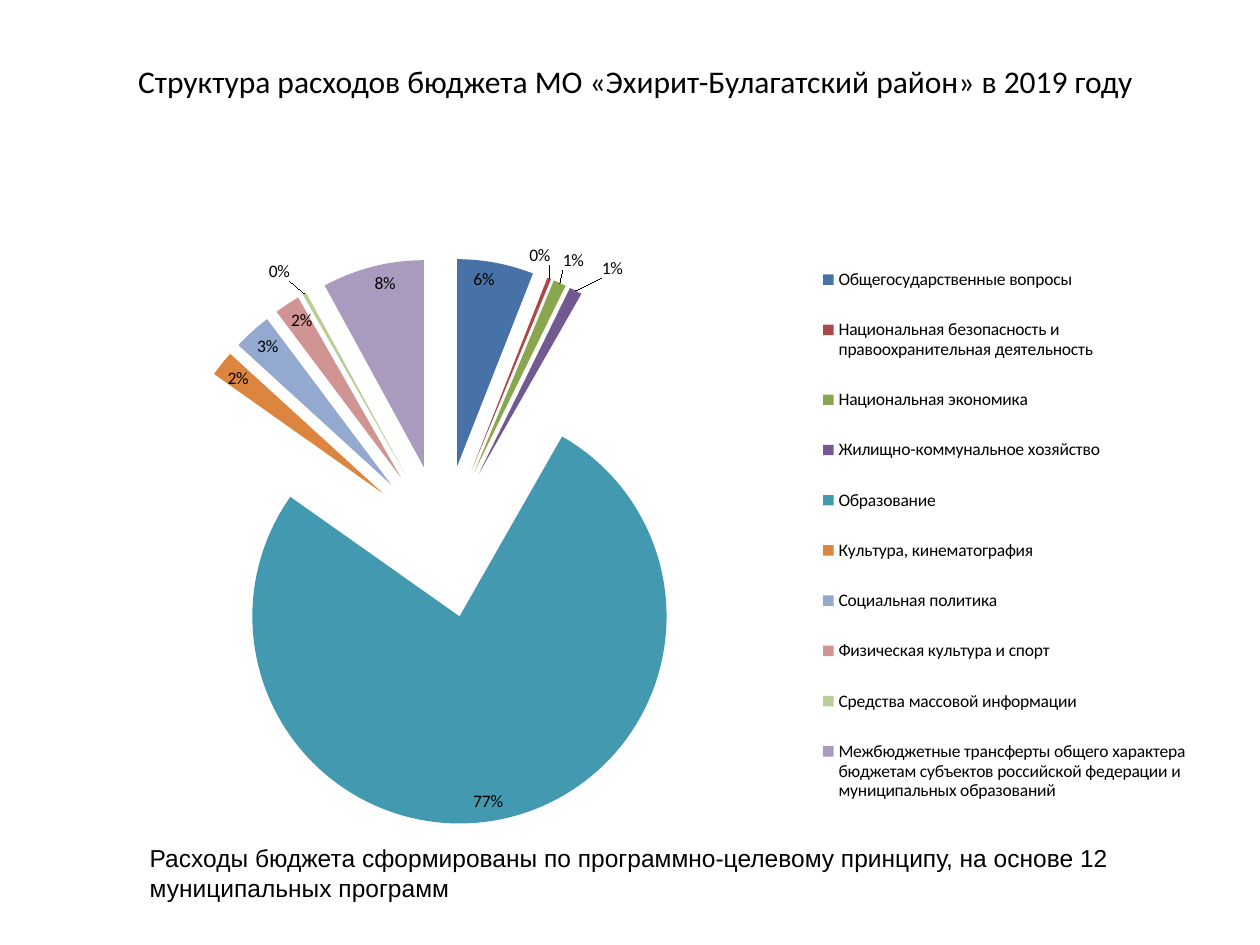
from lxml.etree import SubElement
from pptx import Presentation
from pptx.chart.data import CategoryChartData as Data
from pptx.dml.color import RGBColor
from pptx.enum.chart import XL_CHART_TYPE as Kind, XL_LABEL_POSITION as Pos
from pptx.enum.chart import XL_LEGEND_POSITION as Side
from pptx.enum.text import MSO_ANCHOR as Anchor, PP_ALIGN as Align
from pptx.oxml.ns import qn
from pptx.util import Inches, Pt

TITLE = "Структура расходов бюджета МО «Эхирит-Булагатский район» в 2019 году"
NOTE = ("Расходы бюджета сформированы по программно-целевому принципу, "
        "на основе 12 муниципальных программ")
COSTS = [
    ("Общегосударственные вопросы", 6, "4672A8"),
    ("Национальная безопасность и правоохранительная деятельность", 0.3, "AB4744"),
    ("Национальная экономика", 1, "8AA64F"),
    ("Жилищно-коммунальное хозяйство", 1, "725990"),
    ("Образование", 77, "4299B0"),
    ("Культура, кинематография", 2, "DC853E"),
    ("Социальная политика", 3, "93A9D0"),
    ("Физическая культура и спорт", 2, "D09493"),
    ("Средства массовой информации", 0.3, "B9CE97"),
    ("Межбюджетные трансферты общего характера бюджетам субъектов "
     "российской федерации и муниципальных образований", 8, "A99BBD"),
]
SHIFTS = {1: (-0.02, -0.01), 2: (0, -0.01), 3: (0.02, -0.01), 8: (-0.01, -0.01)}


def color(code):
    """Turn a hex string into a colour."""
    return RGBColor.from_string(code)


def style(font, name, size):
    """Set the face, size and black colour of a font."""
    font.name, font.size = name, Pt(size)
    font.color.rgb = color("000000")


def write(shape, text, name, size, align):
    """Fill a shape with one styled, vertically centred paragraph."""
    frame = shape.text_frame
    frame.word_wrap = True
    frame.vertical_anchor = Anchor.MIDDLE
    frame.text = text
    para = frame.paragraphs[0]
    para.alignment = align
    style(para.font, name, size)


def add_title(slide, box):
    """Place the slide title in the box."""
    title = slide.shapes.title
    title.left, title.top, title.width, title.height = map(Inches, box)
    write(title, TITLE, "Calibri", 18, Align.CENTER)


def set_layout(node, spot, index=1, inner=False):
    """Fix a part to a box, or shift it by a pair, in fractions of the chart."""
    for old in node.findall(qn("c:layout")):
        node.remove(old)
    layout = SubElement(node, qn("c:layout"))
    node.insert(index, layout)
    manual = SubElement(layout, qn("c:manualLayout"))
    if inner:
        SubElement(manual, qn("c:layoutTarget")).set("val", "inner")
    if len(spot) == 4:
        for tag in ("xMode", "yMode"):
            SubElement(manual, qn("c:" + tag)).set("val", "edge")
    for tag, part in zip("xywh", spot):
        SubElement(manual, qn("c:" + tag)).set("val", str(part))


def add_label(point, shift):
    """Set the percent label of a thin slice outside it, moved by the shift."""
    label = point.data_label
    label.position = Pos.OUTSIDE_END
    node = label._dLbl
    for tag, flag in (("Val", "0"), ("Percent", "1"), ("LegendKey", "0")):
        node.find(qn("c:show" + tag)).set("val", flag)
    set_layout(node, shift)


def add_pie(slide, box):
    """Place the exploded pie of costs and its legend in the box."""
    data = Data()
    data.categories = [name for name, _, _ in COSTS]
    data.add_series("Расходы", [cost for _, cost, _ in COSTS])
    chart = slide.shapes.add_chart(Kind.PIE_EXPLODED, *map(Inches, box), data).chart
    style(chart.font, "Calibri", 10)
    chart.has_title = False
    chart.has_legend = True
    legend = chart.legend
    legend.position = Side.RIGHT
    legend.include_in_layout = False
    style(legend.font, "Calibri", 10)
    set_layout(legend._element, (0.67, 0.03, 0.32, 0.95))
    area = chart._chartSpace.chart.plotArea
    set_layout(area, (0.08, 0.06, 0.51, 0.91), index=0, inner=True)

    plot = chart.plots[0]
    plot.vary_by_categories = True
    series = plot.series[0]
    labels = series.data_labels
    labels.show_percentage = True
    labels.show_value = False
    labels.number_format, labels.number_format_is_linked = "0%", False
    labels.position = Pos.INSIDE_END
    style(labels.font, "Calibri", 10)
    for i, (_, _, code) in enumerate(COSTS):
        point = series.points[i]
        point.format.fill.solid()
        point.format.fill.fore_color.rgb = color(code)
        point.format.line.fill.background()
        if i in SHIFTS:
            add_label(point, SHIFTS[i])
    for burst in area.iter(qn("c:explosion")):
        burst.set("val", "37")


def add_note(slide, box):
    """Place the closing remark in the box."""
    note = slide.shapes.add_textbox(*map(Inches, box))
    write(note, NOTE, "Arial", 14, Align.LEFT)


def main():
    """Build the slide and save it."""
    deck = Presentation()
    deck.slide_width, deck.slide_height = Inches(10), Inches(7.5)
    slide = deck.slides.add_slide(deck.slide_layouts[5])
    add_title(slide, (0.59, 0.3, 8.91, 0.69))
    add_pie(slide, (0.5, 1.75, 9, 4.95))
    add_note(slide, (1.09, 6.64, 8.44, 0.57))
    deck.save("out.pptx")


if __name__ == "__main__":
    main()
